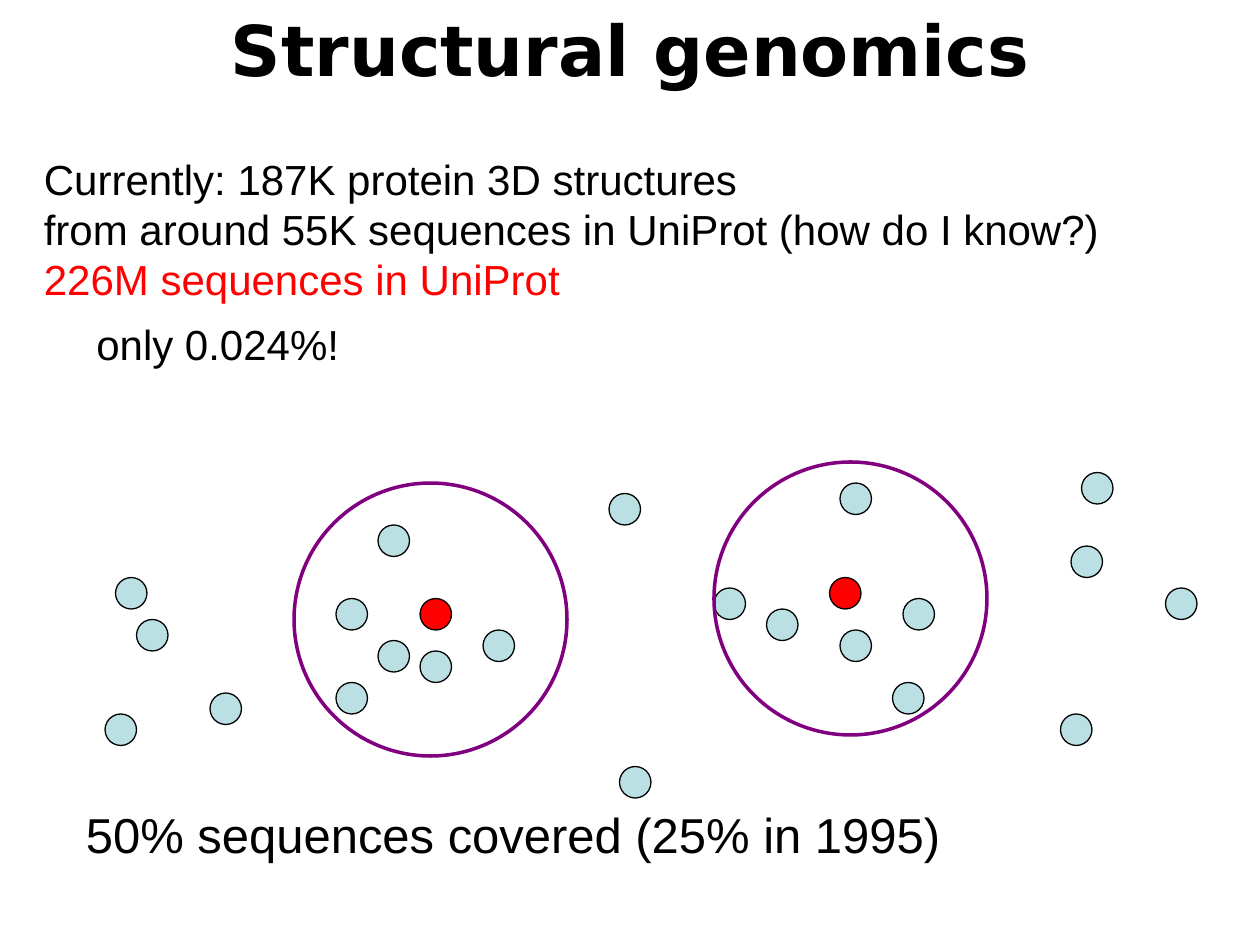
from dataclasses import dataclass

from pptx import Presentation
from pptx.dml.color import RGBColor
from pptx.enum.shapes import MSO_SHAPE
from pptx.enum.text import MSO_AUTO_SIZE, PP_ALIGN
from pptx.util import Pt


@dataclass(frozen=True)
class Theme:
    black: RGBColor = RGBColor(0, 0, 0)
    red: RGBColor = RGBColor(255, 0, 0)
    purple: RGBColor = RGBColor(128, 0, 128)
    pale_blue: RGBColor = RGBColor(0xBB, 0xE0, 0xE3)
    title_font: str = "DejaVu Sans"
    body_font: str = "Arial"
    title_size: int = 40
    body_size: int = 24
    conclusion_size: int = 28


THEME = Theme()
DOT_SIZE = 18
FAMILY_SIZE = 156

SEQUENCES = [
    (192, 342), (216, 366), (192, 390), (438, 348), (276, 360), (216, 300),
    (408, 336), (240, 372), (480, 276), (354, 438), (480, 360), (510, 390),
    (516, 342), (612, 312), (66, 330), (78, 354), (666, 336), (618, 270),
    (606, 408), (348, 282), (60, 408), (120, 396),
]
KNOWN_STRUCTURES = [(240, 342), (474, 330)]
FAMILIES = [(168, 276), (408, 264)]


def add_circle(shapes, position, size, line_color, line_width, fill_color=None):
    left, top = position
    shape = shapes.add_shape(MSO_SHAPE.OVAL, Pt(left), Pt(top), Pt(size), Pt(size))
    shape.shadow.inherit = False
    if fill_color is None:
        shape.fill.background()
    else:
        shape.fill.solid()
        shape.fill.fore_color.rgb = fill_color
    shape.line.color.rgb = line_color
    shape.line.width = Pt(line_width)


def add_dot(shapes, position, color):
    add_circle(shapes, position, DOT_SIZE, THEME.black, 0.75, color)


def add_text(slide, box, lines, size, font=THEME.body_font, wrap=False):
    shape = slide.shapes.add_textbox(*[Pt(length) for length in box])
    frame = shape.text_frame
    frame.word_wrap = wrap
    frame.auto_size = MSO_AUTO_SIZE.SHAPE_TO_FIT_TEXT
    for index, (text, color) in enumerate(lines):
        paragraph = frame.add_paragraph() if index else frame.paragraphs[0]
        paragraph.text = text
        paragraph.font.name = font
        paragraph.font.size = Pt(size)
        paragraph.font.color.rgb = color
    return frame


def main():
    presentation = Presentation()
    presentation.slide_width, presentation.slide_height = Pt(720), Pt(540)
    slide = presentation.slides.add_slide(presentation.slide_layouts[6])

    sequence_group = slide.shapes.add_group_shape()
    for position in SEQUENCES:
        add_dot(sequence_group.shapes, position, THEME.pale_blue)

    title = add_text(slide, (0, 0, 720, 55.5), [("Structural genomics", THEME.black)],
                     THEME.title_size, THEME.title_font, wrap=True)
    title.paragraphs[0].font.bold = True
    title.paragraphs[0].alignment = PP_ALIGN.CENTER

    for position in FAMILIES:
        add_circle(slide.shapes, position, FAMILY_SIZE, THEME.purple, 2)
    for position in KNOWN_STRUCTURES:
        add_dot(slide.shapes, position, THEME.red)

    add_text(slide, (42, 456, 504, 41),
             [("50% sequences covered (25% in 1995)", THEME.black)], THEME.conclusion_size)
    add_text(slide, (18, 84, 623.5, 94.5), [
        ("Currently: 187K protein 3D structures", THEME.black),
        ("from around 55K sequences in UniProt (how do I know?)", THEME.black),
        ("226M sequences in UniProt", THEME.red),
    ], THEME.body_size)
    add_text(slide, (48, 178.5, 155, 36), [("only 0.024%!", THEME.black)], THEME.body_size)

    presentation.save("out.pptx")


if __name__ == "__main__":
    main()
